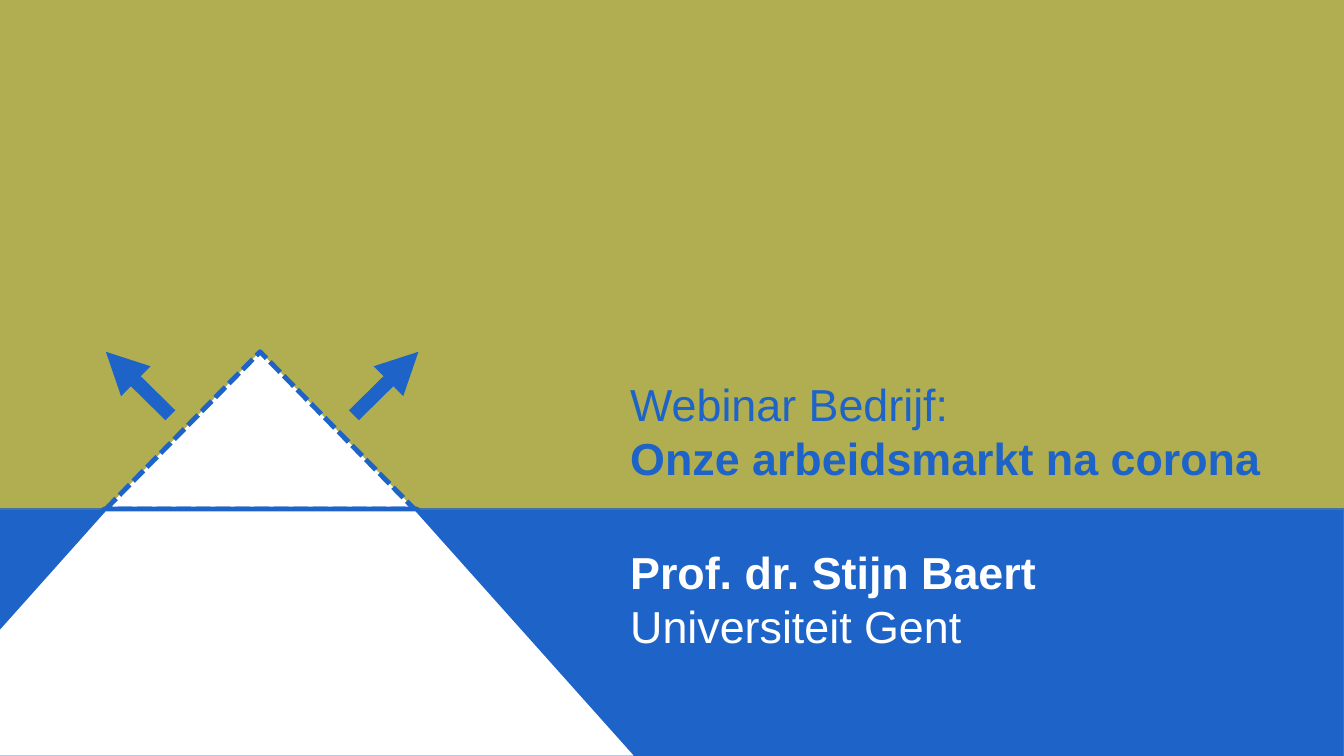
from pptx import Presentation
from pptx.dml.color import RGBColor
from pptx.enum import dml, shapes, text
from pptx.oxml import ns
from pptx.util import Inches, Pt
from lxml import etree

OLIVE, BLUE, WHITE, EDGE = "B0AE50", "1E64C8", "FFFFFF", "43739E"
WATERLINE, DEPTH = 5.05, 2.47

HEADLINE = [("Webinar Bedrijf:", False), ("Onze arbeidsmarkt na corona", True)]
SPEAKER = [("Prof. dr. Stijn Baert", True), ("Universiteit Gent", False)]

SEA = (-0.13, WATERLINE, 13.46, DEPTH)
PEAK = (1.05, 3.49, 3.06, WATERLINE - 3.49)
BASE = (-1.17, WATERLINE, 7.51, DEPTH)
BASE_SLANT = 0.893
ARROWS = [((1.69, 4.12), (1.05, 3.49)), ((3.51, 4.12), (4.15, 3.49))]


def colour(value):
    return RGBColor.from_string(value)


def add_area(slide, kind, box, fill, edge, weight):
    area = slide.shapes.add_shape(kind, *map(Inches, box))
    area.shadow.inherit = False
    area.fill.solid()
    area.fill.fore_color.rgb = colour(fill)
    area.line.color.rgb = colour(edge)
    area.line.width = Pt(weight)
    return area


def add_arrow(slide, start, end):
    arrow = slide.shapes.add_connector(
        shapes.MSO_CONNECTOR.STRAIGHT, *map(Inches, start + end))
    arrow.line.color.rgb = colour(BLUE)
    arrow.line.width = Pt(10)
    etree.SubElement(arrow.line._get_or_add_ln(), ns.qn("a:tailEnd"), type="triangle")
    etree.SubElement(arrow._element.spPr, ns.qn("a:effectLst"))


def write_lines(slide, holder, box, lines, ink):
    holder.left, holder.top, holder.width, holder.height = map(Inches, box)
    frame = holder.text_frame
    frame.word_wrap = True
    frame.auto_size = text.MSO_AUTO_SIZE.NONE
    frame.vertical_anchor = text.MSO_ANCHOR.MIDDLE
    for i, (words, bold) in enumerate(lines):
        line = frame.add_paragraph() if i else frame.paragraphs[0]
        line.alignment = text.PP_ALIGN.LEFT
        line.space_before = line.space_after = Pt(0)
        line.line_spacing = Pt(38.6)
        run = line.add_run()
        run.text = words
        run.font.name = "Arial"
        run.font.size = Pt(32)
        run.font.bold = bold
        run.font.color.rgb = colour(ink)
    slide.shapes._spTree.append(holder._element)


def main():
    deck = Presentation()
    deck.slide_width, deck.slide_height = Inches(13.33), Inches(7.5)
    slide = deck.slides.add_slide(deck.slide_layouts[0])
    slide.background.fill.solid()
    slide.background.fill.fore_color.rgb = colour(OLIVE)

    preset = shapes.MSO_SHAPE
    add_area(slide, preset.RECTANGLE, SEA, BLUE, EDGE, 1)
    peak = add_area(slide, preset.ISOSCELES_TRIANGLE, PEAK, WHITE, BLUE, 3.5)
    peak.line.dash_style = dml.MSO_LINE.SQUARE_DOT
    base = add_area(slide, preset.TRAPEZOID, BASE, WHITE, BLUE, 3.5)
    base.adjustments[0] = BASE_SLANT
    for start, end in ARROWS:
        add_arrow(slide, start, end)

    headline, speaker = slide.placeholders
    write_lines(slide, headline, (6.15, 3.68, 6.58, 1.18), HEADLINE, BLUE)
    write_lines(slide, speaker, (6.15, 5.35, 6.54, 1.18), SPEAKER, WHITE)
    deck.save("out.pptx")


if __name__ == "__main__":
    main()
